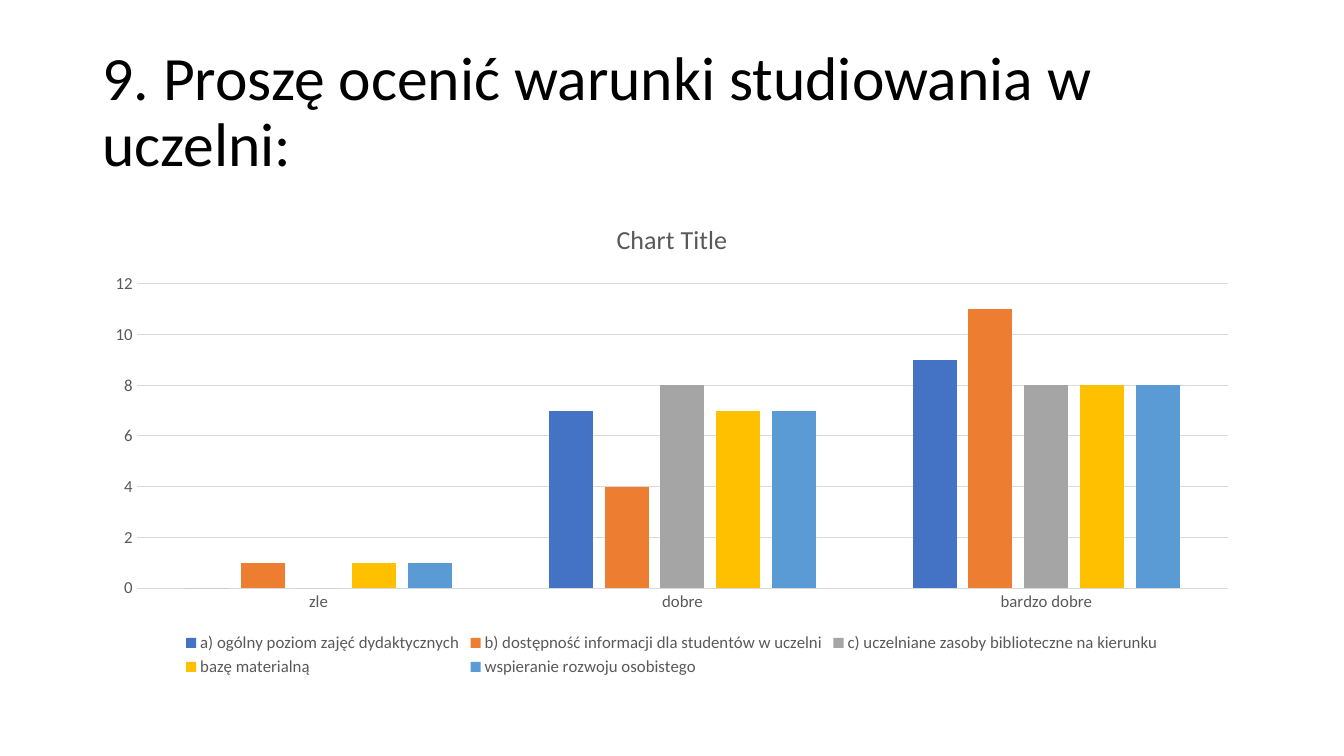
"""Build the survey slide on study conditions with a clustered column chart."""
from dataclasses import dataclass

from pptx import Presentation
from pptx.chart.data import CategoryChartData
from pptx.dml.color import RGBColor
from pptx.enum.chart import XL_CHART_TYPE, XL_LEGEND_POSITION, XL_TICK_MARK
from pptx.enum.text import MSO_ANCHOR, PP_ALIGN
from pptx.util import Pt


@dataclass(frozen=True)
class Theme:
    face: str = "Calibri"
    ink: RGBColor = RGBColor.from_string("000000")
    label: RGBColor = RGBColor.from_string("595959")
    rule: RGBColor = RGBColor.from_string("D9D9D9")
    heading_size: Pt = Pt(44)
    caption_size: Pt = Pt(18.6)
    label_size: Pt = Pt(12)


def set_font(font, size, color):
    font.name = theme.face
    font.size = size
    font.bold = False
    font.color.rgb = color


def set_rule(line):
    line.color.rgb = theme.rule
    line.width = Pt(0.75)


theme = Theme()
ratings = ["zle", "dobre", "bardzo dobre"]
conditions = [
    ("a) ogólny poziom zajęć dydaktycznych", (0, 7, 9), "4472C4"),
    ("b) dostępność informacji dla studentów w uczelni", (1, 4, 11), "ED7D31"),
    ("c) uczelniane zasoby biblioteczne na kierunku", (0, 8, 8), "A5A5A5"),
    ("bazę materialną", (1, 7, 8), "FFC000"),
    ("wspieranie rozwoju osobistego", (1, 7, 8), "5B9BD5"),
]

deck = Presentation()
deck.slide_width, deck.slide_height = Pt(960), Pt(540)
slide = deck.slides.add_slide(deck.slide_layouts[5])

question = slide.shapes.title
question.left, question.top = Pt(66), Pt(28.75)
question.width, question.height = Pt(828), Pt(104.4)
question.text_frame.word_wrap = True
question.text_frame.vertical_anchor = MSO_ANCHOR.MIDDLE
question_line = question.text_frame.paragraphs[0]
question_line.alignment = PP_ALIGN.LEFT
question_line.line_spacing = 0.9
question_text = question_line.add_run()
question_text.text = "9. Proszę ocenić warunki studiowania w uczelni:"
set_font(question_text.font, theme.heading_size, theme.ink)

answers = CategoryChartData()
answers.categories = ratings
for condition, counts, _ in conditions:
    answers.add_series(condition, counts)
chart = slide.shapes.add_chart(
    XL_CHART_TYPE.COLUMN_CLUSTERED, Pt(66), Pt(143.75), Pt(828), Pt(342.6), answers
).chart
set_font(chart.font, theme.label_size, theme.label)

chart.has_title = True
caption = chart.chart_title.text_frame.paragraphs[0].add_run()
caption.text = "Chart Title"
set_font(caption.font, theme.caption_size, theme.label)
chart.chart_title.include_in_layout = False

bars = chart.plots[0]
bars.gap_width = 219
bars.overlap = -27
bars.vary_by_categories = False
for series, (_, _, color) in zip(bars.series, conditions):
    series.invert_if_negative = False
    series.format.fill.solid()
    series.format.fill.fore_color.rgb = RGBColor.from_string(color)

for axis in (chart.category_axis, chart.value_axis):
    axis.major_tick_mark = XL_TICK_MARK.NONE
    axis.minor_tick_mark = XL_TICK_MARK.NONE
    set_font(axis.tick_labels.font, theme.label_size, theme.label)
set_rule(chart.category_axis.format.line)
chart.value_axis.format.line.fill.background()
chart.value_axis.has_major_gridlines = True
set_rule(chart.value_axis.major_gridlines.format.line)
chart.value_axis.minimum_scale = 0
chart.value_axis.maximum_scale = 12
chart.value_axis.major_unit = 2

chart.has_legend = True
chart.legend.position = XL_LEGEND_POSITION.BOTTOM
chart.legend.include_in_layout = False
set_font(chart.legend.font, theme.label_size, theme.label)

deck.save("out.pptx")
